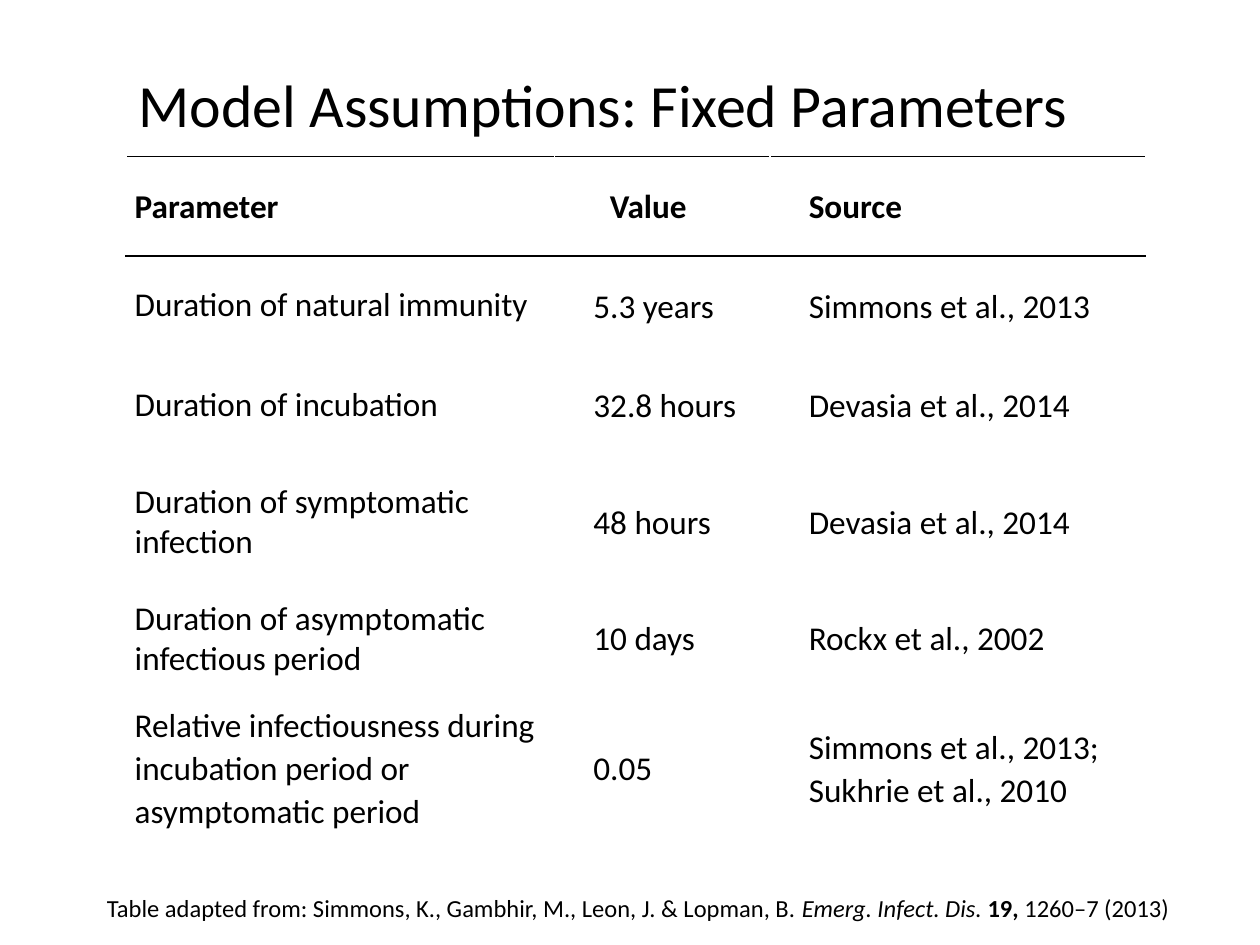
from lxml import etree
from pptx import Presentation
from pptx.dml.color import RGBColor
from pptx.enum import text
from pptx.oxml import ns
from pptx.util import Pt

BLACK = RGBColor(0, 0, 0)
WHITE = RGBColor(255, 255, 255)


def style(run, size, bold=False, italic=False):
    font = run.font
    font.name, font.size = "Calibri", Pt(size)
    font.bold, font.italic = bold, italic
    font.color.rgb = BLACK


def rule(cell, *sides):
    props = cell._tc.get_or_add_tcPr()
    for spot, side in enumerate(sides):
        line = etree.Element(ns.qn("a:" + side), w=str(Pt(1)))
        fill = etree.SubElement(line, ns.qn("a:solidFill"))
        etree.SubElement(fill, ns.qn("a:srgbClr"), val=str(BLACK))
        props.insert(spot, line)


deck = Presentation()
deck.slide_width, deck.slide_height = Pt(720), Pt(540)
slide = deck.slides.add_slide(deck.slide_layouts[6])

title = slide.shapes.add_textbox(Pt(72), Pt(33.84), Pt(594), Pt(56.16)).text_frame
title.word_wrap = True
title.vertical_anchor = text.MSO_ANCHOR.MIDDLE
title.text = "Model Assumptions: Fixed Parameters"
title.paragraphs[0].line_spacing = 0.9
style(title.paragraphs[0].runs[0], 34.2)

rows = [
    ("Parameter", "Value", "Source"),
    ("Duration of natural immunity", "5.3 years", "Simmons et al., 2013"),
    ("Duration of incubation", "32.8 hours", "Devasia et al., 2014"),
    ("Duration of symptomatic infection", "48 hours", "Devasia et al., 2014"),
    ("Duration of asymptomatic infectious period", "10 days", "Rockx et al., 2002"),
    ("Relative infectiousness during incubation period or asymptomatic period",
     "0.05", "Simmons et al., 2013; Sukhrie et al., 2010"),
]
wide = [244.8, 123.12, 214.56]
high = [56.88, 56.88, 56.88, 77.04, 56.88, 90]
grid = slide.shapes.add_table(len(rows), len(wide), Pt(72), Pt(89.28),
                              Pt(sum(wide)), Pt(sum(high))).table
grid.first_row = grid.horz_banding = False
for col, width in zip(grid.columns, wide):
    col.width = Pt(width)

for r, row in enumerate(rows):
    grid.rows[r].height = Pt(high[r])
    for c, words in enumerate(row):
        cell = grid.cell(r, c)
        cell.fill.solid()
        cell.fill.fore_color.rgb = WHITE
        cell.vertical_anchor = text.MSO_ANCHOR.MIDDLE
        cell.margin_left = cell.margin_right = Pt(5)
        cell.margin_top = cell.margin_bottom = 0
        cell.text = words
        para = cell.text_frame.paragraphs[0]
        style(para.runs[0], 19, bold=r == 0)
        if r in (0, 5) or (c and r != 4):
            para.line_spacing = 1.07
        if c:
            indent = 26.64 if (r, c) == (0, 1) else 17.28
            para._p.get_or_add_pPr().set("marL", str(Pt(indent)))
        elif r:
            para.space_after = Pt(12)
        if r == 0:
            rule(cell, "lnT", "lnB")
        elif r == 1:
            rule(cell, "lnT")

note = slide.shapes.add_textbox(Pt(54), Pt(506.88), Pt(630), Pt(24.48)).text_frame
note.word_wrap = True
note.auto_size = text.MSO_AUTO_SIZE.SHAPE_TO_FIT_TEXT
for words, bold, italic in [
    ("Table adapted from: Simmons, K., Gambhir, M., Leon, J. & Lopman, B. ", False, False),
    ("Emerg. Infect. Dis. ", False, True),
    ("19,", True, False),
    (" 1260–7 (2013)", False, False),
]:
    run = note.paragraphs[0].add_run()
    run.text = words
    style(run, 14, bold, italic)

deck.save("out.pptx")
